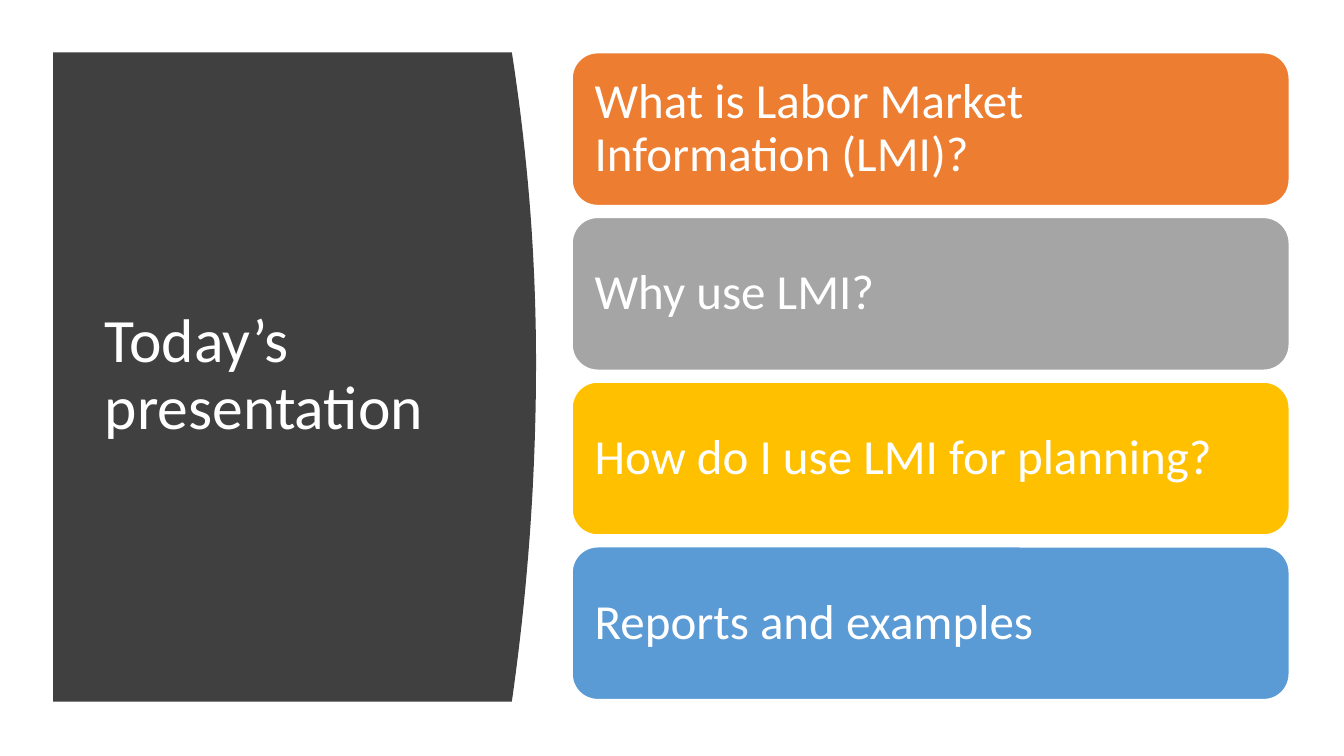
import pptx
import pptx.dml.color
import pptx.enum.shapes
import pptx.enum.text
import pptx.util

Cm = pptx.util.Cm
Pt = pptx.util.Pt
RGBColor = pptx.dml.color.RGBColor

WHITE = RGBColor(0xFF, 0xFF, 0xFF)
CHARCOAL = RGBColor(0x40, 0x40, 0x40)
ORANGE = RGBColor(0xED, 0x7D, 0x31)
GRAY = RGBColor(0xA5, 0xA5, 0xA5)
GOLD = RGBColor(0xFF, 0xC0, 0x00)
BLUE = RGBColor(0x5B, 0x9B, 0xD5)

HEADING = "Today’s presentation"
TOPICS = [
    ("What is Labor Market Information (LMI)?", ORANGE),
    ("Why use LMI?", GRAY),
    ("How do I use LMI for planning?", GOLD),
    ("Reports and examples", BLUE),
]

# Lengths in centimetres
PANEL_LEFT, PANEL_TOP, PANEL_BOTTOM = 1.34, 1.32, 17.68
PANEL_SHOULDER, PANEL_APEX, APEX_Y = 12.9, 13.51, 9.14
CURVE_STEPS = 40
CARD_LEFT, CARD_TOP, CARD_WIDTH, CARD_HEIGHT = 14.42, 1.33, 18.07, 3.85
CARD_PITCH = 4.15
CARD_INSET = 0.38


def panel_edge(y):
    """Return the x of the panel's bulging right edge at height y."""
    end = PANEL_TOP if y < APEX_Y else PANEL_BOTTOM
    distance = (y - APEX_Y) / (end - APEX_Y)
    return PANEL_APEX - (PANEL_APEX - PANEL_SHOULDER) * distance ** 2


def style_text(frame, size):
    frame.word_wrap = True
    frame.auto_size = pptx.enum.text.MSO_AUTO_SIZE.NONE
    frame.vertical_anchor = pptx.enum.text.MSO_ANCHOR.MIDDLE
    paragraph = frame.paragraphs[0]
    paragraph.alignment = pptx.enum.text.PP_ALIGN.LEFT
    paragraph.line_spacing = 0.9
    paragraph.font.name = "Calibri"
    paragraph.font.size = Pt(size)
    paragraph.font.color.rgb = WHITE


def add_panel(slide):
    step = (PANEL_BOTTOM - PANEL_TOP) / CURVE_STEPS
    heights = [PANEL_TOP + step * i for i in range(CURVE_STEPS + 1)]
    edge = [(Cm(panel_edge(y)), Cm(y)) for y in heights]
    outline = slide.shapes.build_freeform(Cm(PANEL_LEFT), Cm(PANEL_TOP))
    outline.add_line_segments(edge + [(Cm(PANEL_LEFT), Cm(PANEL_BOTTOM))])
    panel = outline.convert_to_shape()
    panel.shadow.inherit = False
    panel.fill.solid()
    panel.fill.fore_color.rgb = CHARCOAL
    panel.line.fill.background()


def add_heading(slide):
    heading = slide.shapes.title
    heading.left, heading.top = Cm(2.39), Cm(2.82)
    heading.width, heading.height = Cm(9.5), Cm(13.31)
    heading.text_frame.text = HEADING
    style_text(heading.text_frame, 44)
    # Bring the title in front of the panel
    slide.shapes.element.append(heading.element)


def add_card(slide, topic, color, top):
    card = slide.shapes.add_shape(
        pptx.enum.shapes.MSO_SHAPE.ROUNDED_RECTANGLE,
        Cm(CARD_LEFT), Cm(top), Cm(CARD_WIDTH), Cm(CARD_HEIGHT))
    card.shadow.inherit = False
    card.fill.solid()
    card.fill.fore_color.rgb = color
    card.line.color.rgb = WHITE
    card.line.width = Pt(1)
    frame = card.text_frame
    frame.margin_left = frame.margin_right = Cm(CARD_INSET)
    frame.margin_top = frame.margin_bottom = Cm(CARD_INSET)
    frame.text = topic
    style_text(frame, 35)


def main():
    deck = pptx.Presentation()
    deck.slide_width, deck.slide_height = Cm(33.87), Cm(19.05)
    title_only = deck.slide_layouts[5]
    slide = deck.slides.add_slide(title_only)
    add_panel(slide)
    add_heading(slide)
    for i, (topic, color) in enumerate(TOPICS):
        add_card(slide, topic, color, CARD_TOP + i * CARD_PITCH)
    deck.save("out.pptx")


if __name__ == "__main__":
    main()
